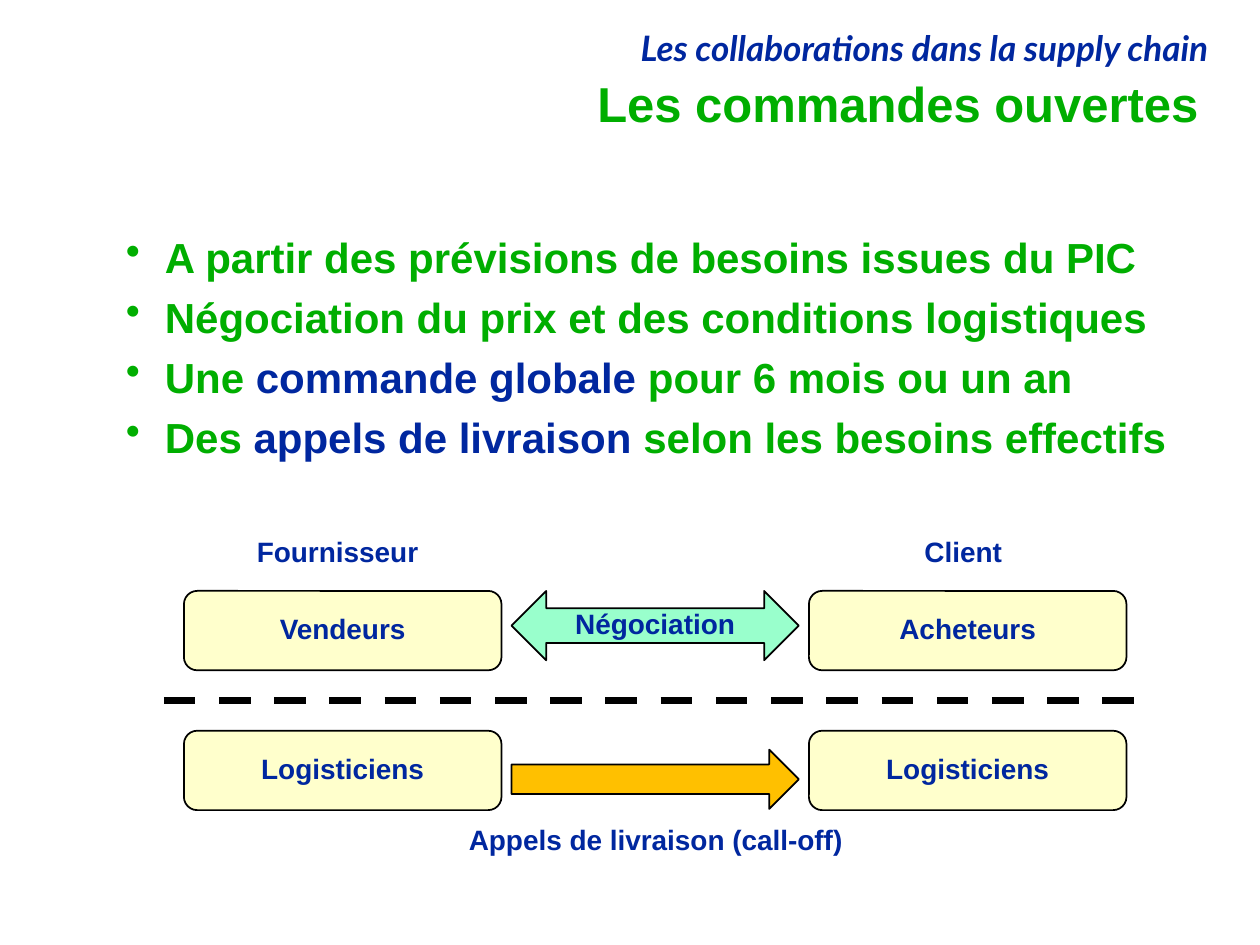
from dataclasses import dataclass

import pptx
import pptx.dml.color
import pptx.enum.dml
import pptx.enum.shapes
import pptx.enum.text
import pptx.oxml.ns
import pptx.util
from lxml import etree

Inches = pptx.util.Inches
Pt = pptx.util.Pt
RGBColor = pptx.dml.color.RGBColor
Align = pptx.enum.text.PP_ALIGN
Anchor = pptx.enum.text.MSO_ANCHOR
Shape = pptx.enum.shapes.MSO_SHAPE

BLUE = RGBColor(0x00, 0x27, 0x9F)
GREEN = RGBColor(0x00, 0xAE, 0x00)
CREAM = RGBColor(0xFF, 0xFF, 0xCC)
MINT = RGBColor(0x99, 0xFF, 0xCC)
AMBER = RGBColor(0xFF, 0xC0, 0x00)
BLACK = RGBColor(0x00, 0x00, 0x00)


@dataclass
class Area:
    left: float
    top: float
    width: float
    height: float

    def lengths(self) -> list:
        return [Inches(n) for n in (self.left, self.top, self.width, self.height)]


@dataclass
class Block:
    """A filled shape of the diagram, with its label."""
    kind: Shape
    area: Area
    fill: RGBColor
    text: str = ""


@dataclass
class Caption:
    text: str
    area: Area


def style_paragraph(para, size: float, color: RGBColor, align: Align, name: str = "Arial") -> None:
    para.alignment = align
    para.line_spacing = 0.9
    font = para.font
    font.name, font.size, font.bold = name, Pt(size), True
    font.color.rgb = color


def add_tagline(page, text: str, area: Area) -> None:
    frame = page.shapes.add_textbox(*area.lengths()).text_frame
    frame.word_wrap = True
    para = frame.paragraphs[0]
    para.text = text
    style_paragraph(para, 20, BLUE, Align.RIGHT, "Lato")
    para.font.italic = True


def set_title(page, text: str, area: Area) -> None:
    title = page.shapes.title
    title.left, title.top, title.width, title.height = area.lengths()
    title.text_frame.text = text
    title.text_frame.vertical_anchor = Anchor.MIDDLE
    style_paragraph(title.text_frame.paragraphs[0], 28, GREEN, Align.RIGHT)


def add_bullets(page, lines: list, area: Area) -> None:
    """Each line is a tuple of spans; every second span is blue."""
    frame = page.shapes.add_textbox(*area.lengths()).text_frame
    frame.word_wrap = True
    for number, spans in enumerate(lines):
        para = frame.add_paragraph() if number else frame.paragraphs[0]
        style_paragraph(para, 24, GREEN, Align.LEFT)
        para.space_before = Pt(8.4)
        for position, text in enumerate(spans):
            span = para.add_run()
            span.text = text
            span.font.color.rgb = BLUE if position % 2 else GREEN
        properties = para._p.get_or_add_pPr()
        properties.set("marL", str(Inches(0.31)))
        properties.set("indent", str(-Inches(0.31)))
        bullet = etree.Element(pptx.oxml.ns.qn("a:buChar"), char="•")
        properties.find(pptx.oxml.ns.qn("a:defRPr")).addprevious(bullet)


def add_block(page, block: Block) -> None:
    shape = page.shapes.add_shape(block.kind, *block.area.lengths())
    shape.shadow.inherit = False
    shape.fill.solid()
    shape.fill.fore_color.rgb = block.fill
    shape.line.color.rgb = BLACK
    shape.line.width = Pt(1)
    if block.text:
        frame = shape.text_frame
        frame.word_wrap = False
        frame.vertical_anchor = Anchor.MIDDLE
        frame.paragraphs[0].text = block.text
        style_paragraph(frame.paragraphs[0], 16, BLUE, Align.CENTER)


def add_caption(page, caption: Caption) -> None:
    frame = page.shapes.add_textbox(*caption.area.lengths()).text_frame
    frame.word_wrap = False
    frame.paragraphs[0].text = caption.text
    style_paragraph(frame.paragraphs[0], 16, BLUE, Align.CENTER)


def add_divider(page, left: float, right: float, top: float) -> None:
    line = page.shapes.add_connector(
        pptx.enum.shapes.MSO_CONNECTOR.STRAIGHT,
        Inches(left), Inches(top), Inches(right), Inches(top))
    line.line.color.rgb = BLACK
    line.line.width = Pt(4.5)
    line.line.dash_style = pptx.enum.dml.MSO_LINE.DASH
    etree.SubElement(line._element.spPr, pptx.oxml.ns.qn("a:effectLst"))


BULLETS = [
    ("A partir des prévisions de besoins issues du PIC",),
    ("Négociation du prix et des conditions logistiques",),
    ("Une ", "commande globale ", "pour 6 mois ou un an"),
    ("Des ", "appels de livraison ", "selon les besoins effectifs"),
]

# Diagram grid: supplier and customer columns, sales and logistics rows
COLUMNS = (1.46, 6.42)
ROWS = {4.69: ("Vendeurs", "Acheteurs"), 5.8: ("Logisticiens", "Logisticiens")}
ARROWS = [
    Block(Shape.LEFT_RIGHT_ARROW, Area(4.06, 4.69, 2.28, 0.55), MINT, "Négociation"),
    Block(Shape.RIGHT_ARROW, Area(4.06, 5.95, 2.28, 0.47), AMBER),
]
CAPTIONS = [
    Caption("Fournisseur", Area(1.93, 4.22, 1.5, 0.34)),
    Caption("Client", Area(7.23, 4.22, 0.83, 0.34)),
    Caption("Appels de livraison (call-off)", Area(3.6, 6.51, 3.21, 0.34)),
]


def main() -> None:
    deck = pptx.Presentation()
    deck.slide_width, deck.slide_height = Inches(10), Inches(7.5)
    page = deck.slides.add_slide(deck.slide_layouts.get_by_name("Title Only"))

    # Headings and bullet list
    add_tagline(page, "Les collaborations dans la supply chain", Area(1.61, 0.2, 8.08, 0.4))
    set_title(page, "Les commandes ouvertes", Area(1.69, 0.6, 7.92, 0.5))
    add_bullets(page, BULLETS, Area(0.9, 1.83, 8.82, 1.99))

    # Diagram
    for top, labels in ROWS.items():
        for left, label in zip(COLUMNS, labels):
            add_block(page, Block(Shape.ROUNDED_RECTANGLE, Area(left, top, 2.52, 0.63), CREAM, label))
    for arrow in ARROWS:
        add_block(page, arrow)
    for caption in CAPTIONS:
        add_caption(page, caption)
    add_divider(page, 1.3, 9.17, 5.56)

    deck.save("out.pptx")


if __name__ == "__main__":
    main()
